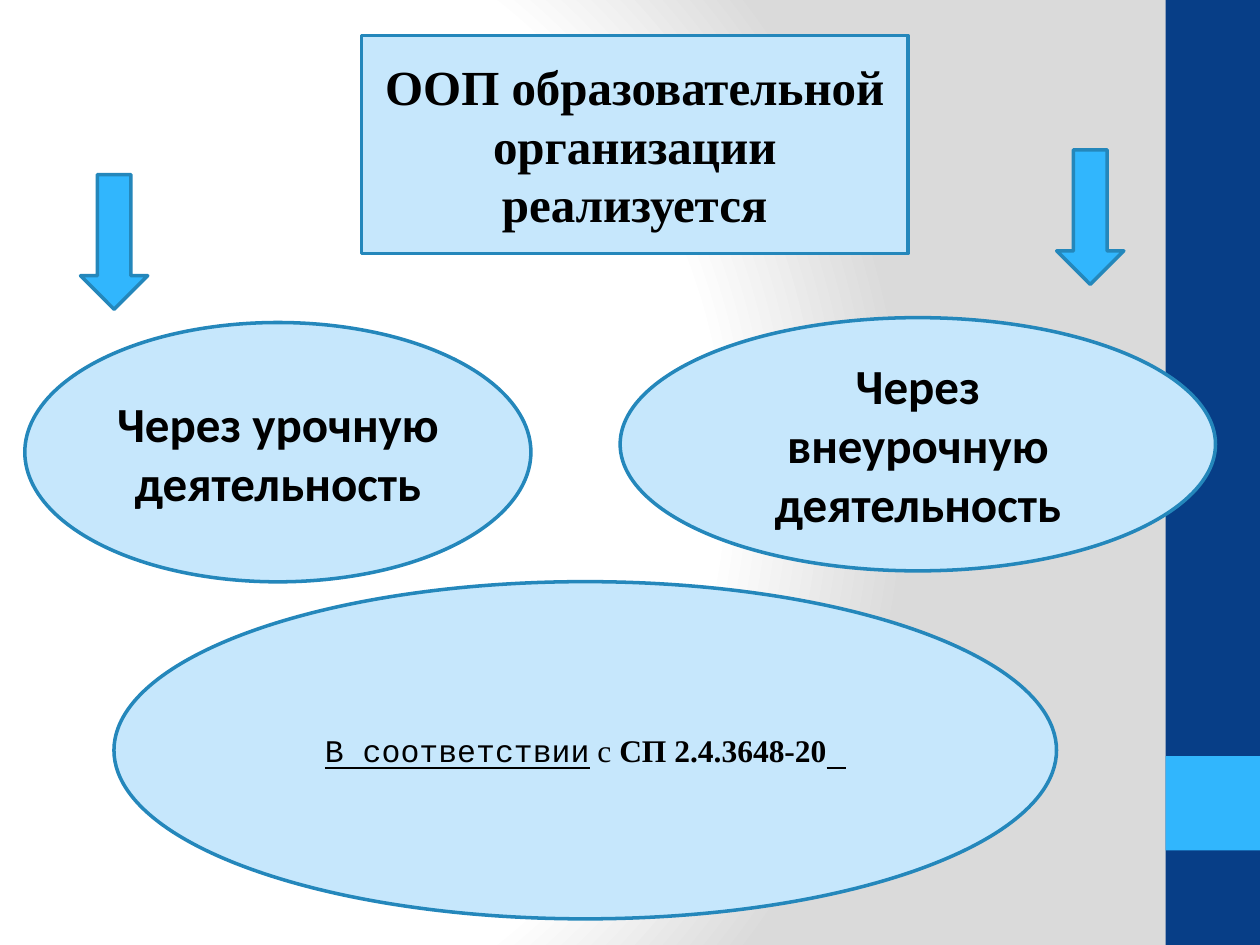
from pptx import Presentation
from pptx import util as u
from pptx.dml.color import RGBColor
from pptx.enum import shapes, text
from pptx.oxml import parse_xml
from pptx.oxml.ns import nsdecls

NAVY = RGBColor(0x07, 0x3E, 0x87)
SKY = RGBColor(0x31, 0xB6, 0xFD)
PALE = RGBColor(0xC6, 0xE7, 0xFC)
OUTLINE = RGBColor(0x24, 0x87, 0xBB)
BLACK = RGBColor(0, 0, 0)

BACKGROUND_STOPS = [(0, "FFFFFF"), (75, "FFFFFF"), (100, "DADADA")]
SERIF, SANS, MONO = "Times New Roman", "Calibri", "Courier New"
RECTANGLE = shapes.MSO_SHAPE.RECTANGLE
OVAL = shapes.MSO_SHAPE.OVAL
ARROW = shapes.MSO_SHAPE.DOWN_ARROW

# Left, top, width, height in points
SIDE_BANDS = [((666, 0, 54, 540), NAVY), ((666, 432, 54, 54), SKY)]

# Each paragraph is a list of runs: text, font, size, bold, underline
BUBBLES = [
    (RECTANGLE, (206.7, 20.3, 312.1, 124.6), [
        [("ООП образовательной организации", SERIF, 28, True, False)],
        [("реализуется", SERIF, 28, True, False)],
    ]),
    (OVAL, (14.2, 184.3, 289.2, 148.2), [
        [("Через урочную деятельность", SANS, 28, True, False)],
    ]),
    (OVAL, (354.4, 181.5, 340.2, 144.7), [
        [("Через внеурочную деятельность", SANS, 28, True, False)],
    ]),
    (OVAL, (65.1, 332.4, 538.6, 192.7), [
        [("В соответствии", MONO, 18, False, True),
         (" с ", SERIF, 18, False, False),
         ("СП 2.4.3648-20", SERIF, 18, True, False),
         (" ", MONO, 18, True, True)],
    ]),
]
ARROW_SIZE = (38.4, 77)
ARROW_CORNERS = [(46, 99.8), (603.8, 85.6)]


def set_background(slide):
    stops = "".join(
        f'<a:gs pos="{position * 1000}"><a:srgbClr val="{color}"/></a:gs>'
        for position, color in BACKGROUND_STOPS)
    slide.element.cSld.insert(0, parse_xml(
        f'<p:bg {nsdecls("p", "a")}><p:bgPr><a:gradFill rotWithShape="1">'
        f'<a:gsLst>{stops}</a:gsLst><a:path path="circle">'
        '<a:fillToRect l="20000" t="50000" r="100000" b="50000"/></a:path>'
        '</a:gradFill><a:effectLst/></p:bgPr></p:bg>'))


def add_figure(slide, kind, box, fill, outlined=True):
    shape = slide.shapes.add_shape(kind, *(u.Pt(value) for value in box))
    shape.shadow.inherit = False
    shape.fill.solid()
    shape.fill.fore_color.rgb = fill
    if outlined:
        shape.line.color.rgb = OUTLINE
        shape.line.width = u.Pt(2)
    else:
        shape.line.fill.background()
    return shape


def write_paragraphs(shape, paragraphs):
    frame = shape.text_frame
    frame.word_wrap = True
    frame.vertical_anchor = text.MSO_ANCHOR.MIDDLE
    for index, runs in enumerate(paragraphs):
        paragraph = frame.add_paragraph() if index else frame.paragraphs[0]
        paragraph.alignment = text.PP_ALIGN.CENTER
        for words, font, size, bold, underline in runs:
            run = paragraph.add_run()
            run.text = words
            run.font.name = font
            run.font.size = u.Pt(size)
            run.font.bold = bold
            run.font.underline = underline
            run.font.color.rgb = BLACK


def main():
    presentation = Presentation()
    presentation.slide_width, presentation.slide_height = u.Pt(720), u.Pt(540)
    slide = presentation.slides.add_slide(presentation.slide_layouts[6])
    set_background(slide)
    for box, color in SIDE_BANDS:
        add_figure(slide, RECTANGLE, box, color, outlined=False)
    for kind, box, paragraphs in BUBBLES:
        write_paragraphs(add_figure(slide, kind, box, PALE), paragraphs)
    for corner in ARROW_CORNERS:
        add_figure(slide, ARROW, corner + ARROW_SIZE, SKY)
    presentation.save("out.pptx")


if __name__ == "__main__":
    main()
